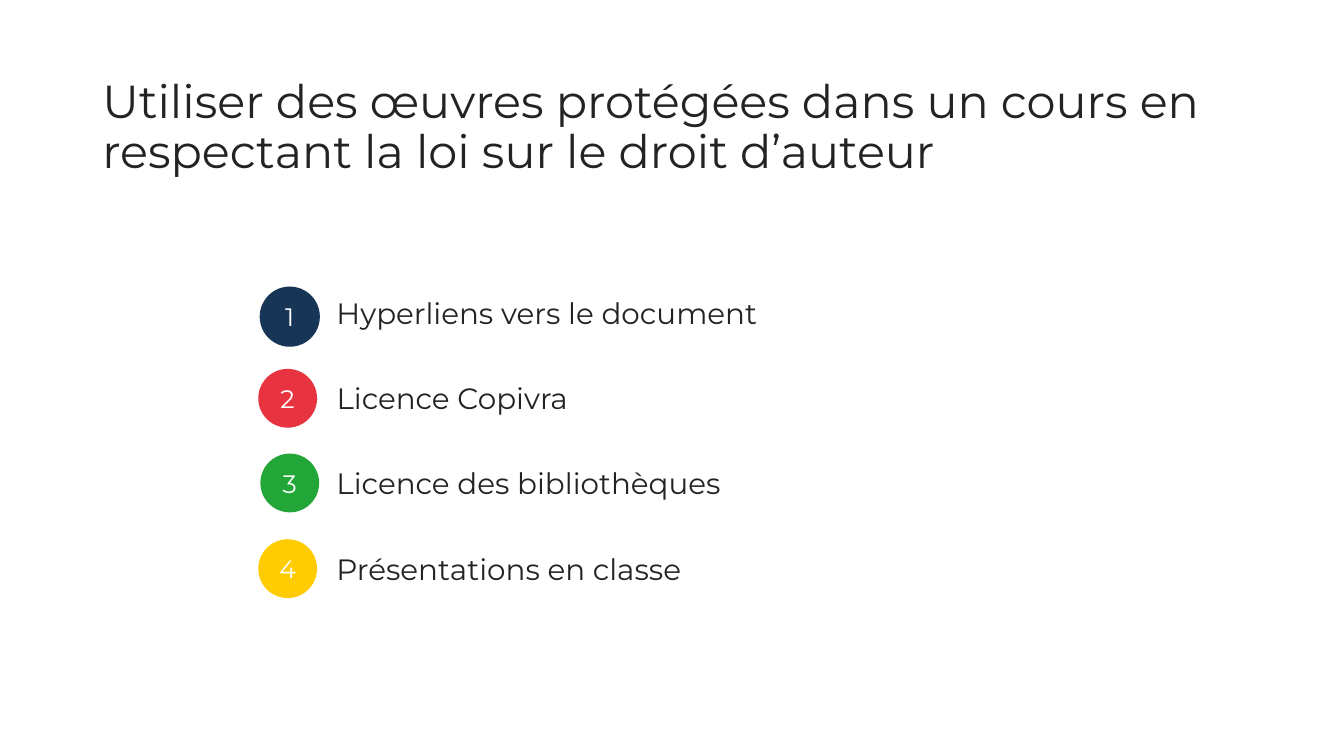
from pptx import Presentation
from pptx.dml.color import RGBColor as RGB
from pptx.enum.shapes import MSO_SHAPE as SHAPE
from pptx.enum.text import MSO_ANCHOR as ANCHOR, PP_ALIGN as ALIGN
from pptx.util import Pt

FONT = "Montserrat"
HEX = {
    "ink": "232326", "white": "FFFFFF", "navy": "173557",
    "red": "E73440", "green": "23A638", "gold": "FECC00",
}
# label, label width, colour, disc left, disc top
ITEMS = [
    ("Hyperliens vers le document", 668, "navy", 186, 205.2),
    ("Licence Copivra", 192, "red", 184.5, 263.5),
    ("Licence des bibliothèques", 294, "green", 186, 324),
    ("Présentations en classe", 266, "gold", 184.5, 385.2),
]
LEFT, TOP, STEP = 233.3, 207, 61
DISC = 42


def color(name):
    return RGB.from_string(HEX[name])


def write(frame, text, size, ink):
    frame.text = text
    font = frame.paragraphs[0].runs[0].font
    font.name, font.size = FONT, Pt(size)
    font.color.rgb = color(ink)


def add_text(slide, text, box, size, wrap=False):
    frame = slide.shapes.add_textbox(*map(Pt, box)).text_frame
    frame.word_wrap = wrap
    write(frame, text, size, "ink")
    return frame


def add_disc(slide, num, left, top, fill):
    disc = slide.shapes.add_shape(
        SHAPE.OVAL, Pt(left), Pt(top), Pt(DISC), Pt(DISC))
    disc.shadow.inherit = False
    disc.fill.solid()
    disc.fill.fore_color.rgb = color(fill)
    # Only the first disc is outlined
    if num == 1:
        disc.line.color.rgb = color(fill)
        disc.line.width = Pt(1)
    else:
        disc.line.fill.background()
    frame = disc.text_frame
    frame.vertical_anchor = ANCHOR.MIDDLE
    write(frame, str(num), 18, "white")
    frame.paragraphs[0].alignment = ALIGN.CENTER


def main():
    prs = Presentation()
    prs.slide_width, prs.slide_height = Pt(960), Pt(540)
    slide = prs.slides.add_slide(prs.slide_layouts[6])

    # Title
    title = add_text(
        slide,
        "Utiliser des œuvres protégées dans un cours en "
        "respectant la loi sur le droit d’auteur",
        (66, 39.6, 828, 104.4), 33, wrap=True)
    title.vertical_anchor = ANCHOR.MIDDLE
    title.paragraphs[0].line_spacing = 0.9

    # Numbered list
    for i, (text, width, fill, left, top) in enumerate(ITEMS):
        add_text(slide, text, (LEFT, TOP + i * STEP, width, 32.4), 21)
        add_disc(slide, i + 1, left, top, fill)

    prs.save("out.pptx")


if __name__ == "__main__":
    main()
